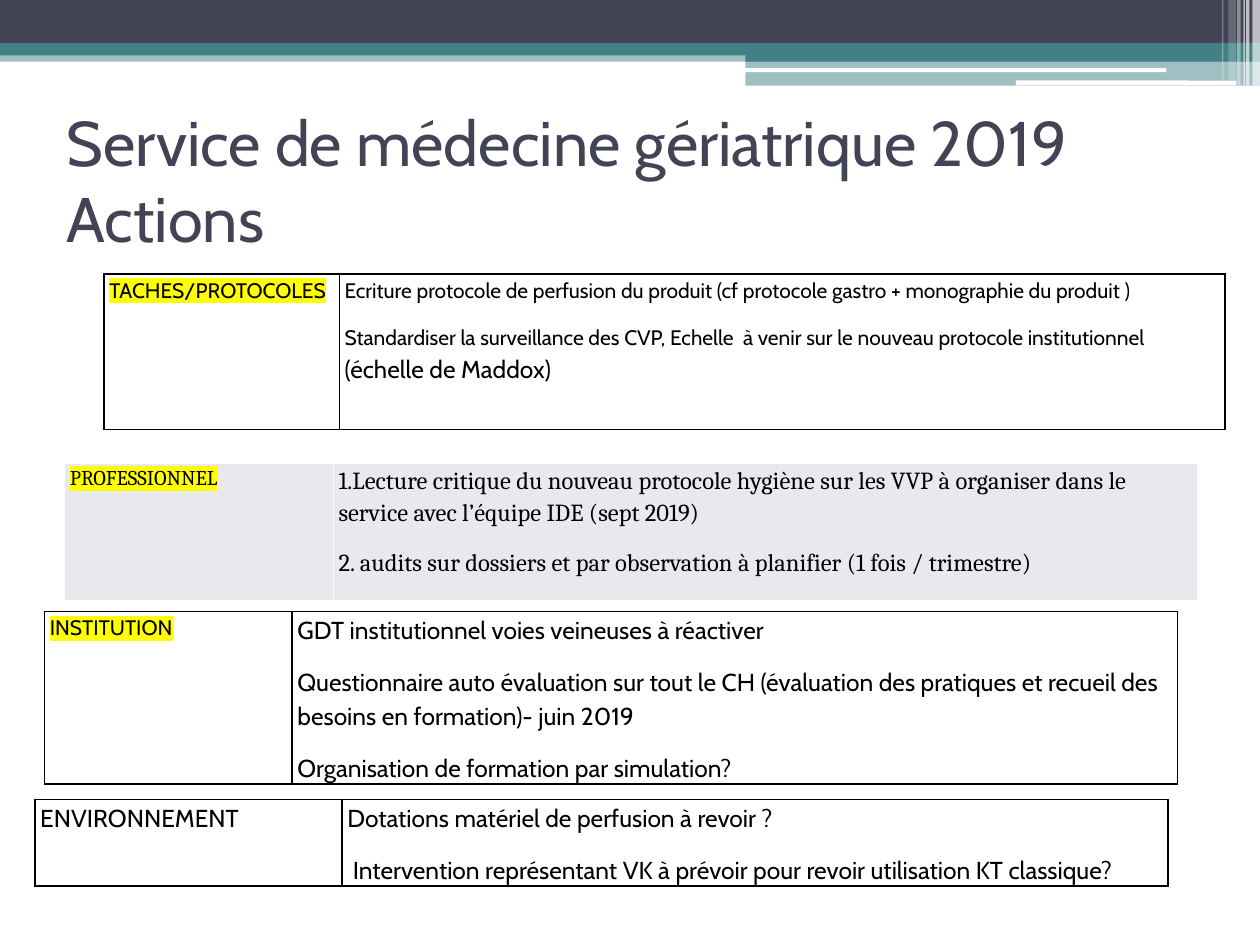
"""Build the 2019 geriatric service action slide with its four action tables."""
from lxml import etree
from pptx import Presentation
from pptx.dml.color import RGBColor
from pptx.enum import shapes, text
from pptx.oxml import ns
from pptx.util import Pt

NAVY = RGBColor(0x42, 0x44, 0x56)
TEAL = RGBColor(0x43, 0x80, 0x86)
WHITE = RGBColor(0xFF, 0xFF, 0xFF)
BLACK = RGBColor(0, 0, 0)
YELLOW = RGBColor(0xFF, 0xFF, 0)
PALE = RGBColor(0xE9, 0xE9, 0xED)


def add_color(parent, tag, color):
    holder = etree.SubElement(parent, ns.qn(tag))
    etree.SubElement(holder, ns.qn("a:srgbClr"), val=str(color))
    return holder


def fill_cell(cell, paragraphs, font, fill, border, highlight):
    cell.margin_left = cell.margin_right = Pt(3)
    cell.margin_top = cell.margin_bottom = 0
    if fill is None:
        cell.fill.background()
    else:
        cell.fill.solid()
        cell.fill.fore_color.rgb = fill
    properties = cell._tc.get_or_add_tcPr()
    for index, side in enumerate(("a:lnL", "a:lnR", "a:lnT", "a:lnB")):
        line = etree.Element(ns.qn(side), w=str(Pt(1)))
        add_color(line, "a:solidFill", border)
        properties.insert(index, line)
    for index, runs in enumerate(paragraphs):
        frame = cell.text_frame
        paragraph = frame.add_paragraph() if index else frame.paragraphs[0]
        paragraph.line_spacing = 1.15
        paragraph.space_after = Pt(10)
        for words, size in runs:
            run = paragraph.add_run()
            run.text = words
            run.font.size = Pt(size)
            run.font.bold = False
            run.font.color.rgb = BLACK
            if highlight:
                add_color(run.font._element, "a:highlight", YELLOW)
            run.font.name = font


presentation = Presentation()
presentation.slide_width, presentation.slide_height = Pt(720), Pt(540)
slide = presentation.slides.add_slide(presentation.slide_layouts[5])

RECTANGLE = shapes.MSO_SHAPE.RECTANGLE
ROUNDED = shapes.MSO_SHAPE.ROUNDED_RECTANGLE
bands = [
    (RECTANGLE, 0, 28.8, 720, 6.5, TEAL, 50),
    (RECTANGLE, 0, 0, 720, 24.5, NAVY, 100),
    (RECTANGLE, 0, 24.5, 720, 7.2, TEAL, 100),
    (RECTANGLE, 426, 28, 294, 7.2, TEAL, 100),
    (RECTANGLE, 426, 35, 294, 14, TEAL, 50),
    (ROUNDED, 425.5, 39, 241, 2.2, WHITE, 100),
    (ROUNDED, 580.5, 46, 126, 2.8, WHITE, 100),
]
stripes = [
    (715.7, 4.3, 49, 65), (712, 2, 49, 65), (710.6, 0.8, 49, 60),
    (707, 2, 49, 40), (702, 4.3, 46, 20), (698.4, 0.8, 46, 30),
]
bands += [(RECTANGLE, left, 0, width, height, WHITE, opacity)
          for left, width, height, opacity in stripes]
for kind, left, top, width, height, color, opacity in bands:
    band = slide.shapes.add_shape(kind, Pt(left), Pt(top), Pt(width), Pt(height))
    band.shadow.inherit = False
    band.fill.solid()
    band.fill.fore_color.rgb = color
    band.line.fill.background()
    if opacity < 100:
        color_node = band._element.spPr.find(".//" + ns.qn("a:srgbClr"))
        etree.SubElement(color_node, ns.qn("a:alpha"), val=str(opacity * 1000))

title = slide.shapes.title
title.left, title.top, title.width, title.height = Pt(31), Pt(60.5), Pt(648), Pt(84)
title.text_frame.vertical_anchor = text.MSO_ANCHOR.MIDDLE
title.text_frame.auto_size = text.MSO_AUTO_SIZE.NONE
paragraph = title.text_frame.paragraphs[0]
paragraph.alignment = text.PP_ALIGN.LEFT
for index, words in enumerate(("Service de médecine gériatrique 2019", "Actions")):
    if index:
        paragraph.add_line_break()
    run = paragraph.add_run()
    run.text = words
    run.font.size = Pt(36)
    run.font.name = "Cabin"
    run.font.color.rgb = NAVY

action_tables = [
    (37, 264.5, (153.5, 494), 79, "Cambria", PALE, WHITE, True, ("PROFESSIONNEL", 12), [
        [("1.Lecture critique du nouveau protocole hygiène sur les VVP à organiser "
          "dans le service avec l’équipe IDE (sept 2019)", 14)],
        [("2. audits sur dossiers et par observation à planifier (1 fois / trimestre)", 14)],
    ]),
    (59.5, 156.5, (134.5, 506), 89, "Cabin", None, BLACK, True, ("TACHES/PROTOCOLES", 12), [
        [("Ecriture protocole de perfusion du produit "
          "(cf protocole gastro + monographie du produit )", 12)],
        [("Standardiser la surveillance des CVP, Echelle  à venir sur le nouveau "
          "protocole institutionnel ", 12), (" ", 11), ("(échelle de Maddox)", 14)],
    ]),
    (20, 457, (175.5, 472), 49, "Cabin", None, BLACK, False, ("ENVIRONNEMENT", 14), [
        [("Dotations matériel de perfusion à revoir ?", 14)],
        [(" Intervention représentant VK à prévoir pour revoir utilisation KT classique?", 14)],
    ]),
    (25.5, 349.5, (141.5, 506), 97, "Cabin", None, BLACK, True, ("INSTITUTION", 12), [
        [("GDT institutionnel voies veineuses à réactiver", 14)],
        [("Questionnaire auto évaluation sur tout le CH (évaluation des pratiques "
          "et recueil des besoins en formation)- juin 2019", 14)],
        [("Organisation de formation par simulation?", 14)],
    ]),
]
for left, top, widths, height, font, fill, border, highlight, heading, actions in action_tables:
    frame = slide.shapes.add_table(1, 2, Pt(left), Pt(top), Pt(sum(widths)), Pt(height))
    table = frame.table
    table.first_row = table.horz_banding = False
    for column, width in zip(table.columns, widths):
        column.width = Pt(width)
    fill_cell(table.cell(0, 0), [[heading]], font, fill, border, highlight)
    fill_cell(table.cell(0, 1), actions, font, fill, border, False)

presentation.save("out.pptx")
